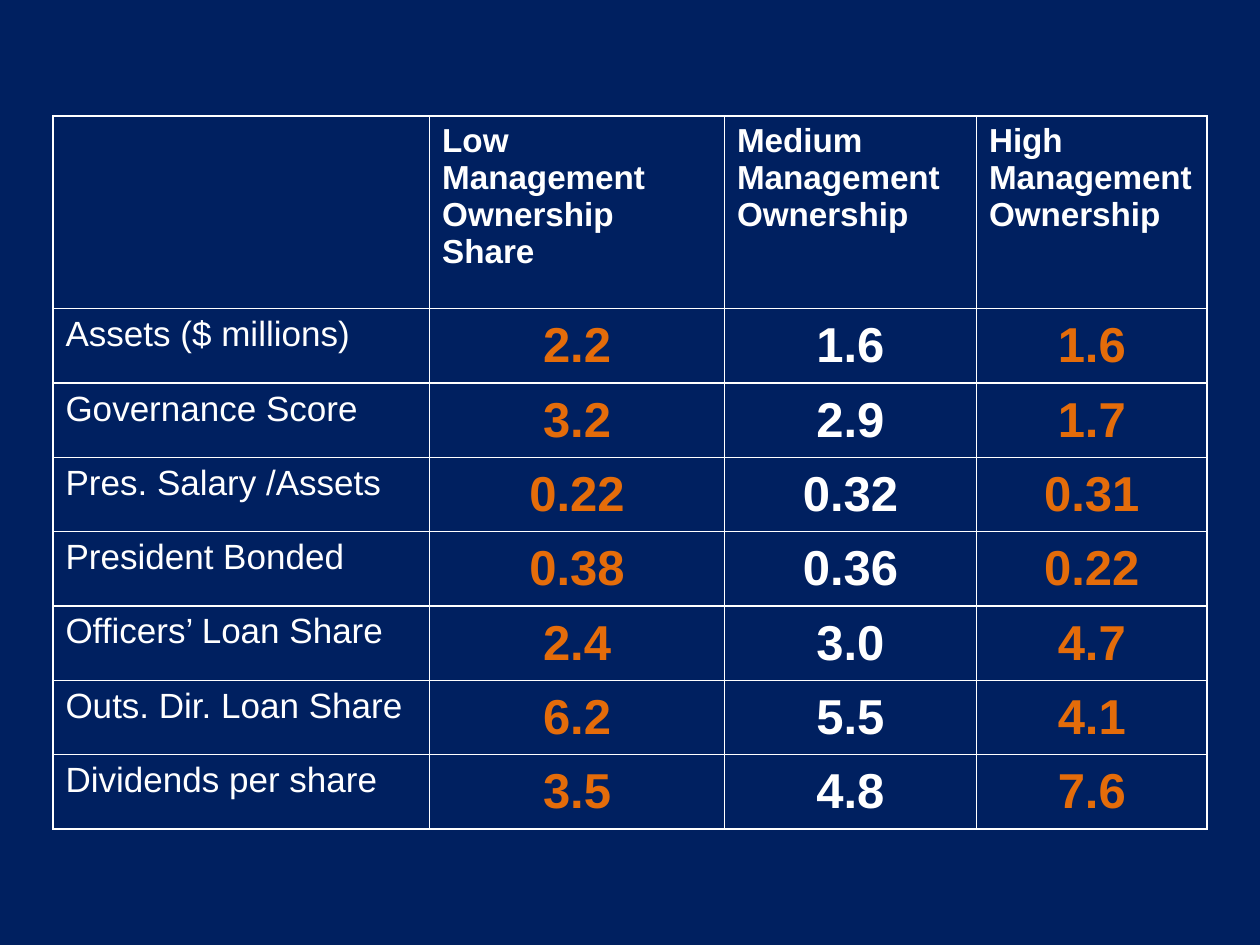
from lxml import etree
from pptx import Presentation
from pptx import util as u
from pptx.dml.color import RGBColor
from pptx.enum import text
from pptx.oxml.ns import qn

PX = u.Inches(1) // 100
NAVY, WHITE, ORANGE = "002060", "FFFFFF", "E46C0A"

HEADERS = ["", "Low Management Ownership Share",
           "Medium Management Ownership", "High Management Ownership"]
ROWS = [
    ["Assets ($ millions)", "2.2", "1.6", "1.6"],
    ["Governance Score", "3.2", "2.9", "1.7"],
    ["Pres. Salary /Assets", "0.22", "0.32", "0.31"],
    ["President Bonded", "0.38", "0.36", "0.22"],
    ["Officers’ Loan Share", "2.4", "3.0", "4.7"],
    ["Outs. Dir. Loan Share", "6.2", "5.5", "4.1"],
    ["Dividends per share", "3.5", "4.8", "7.6"],
]
COLUMN_WIDTHS = [299, 234, 200, 183]
ROW_HEIGHTS = [153] + [59] * len(ROWS)
VALUE_COLORS = [None, ORANGE, WHITE, ORANGE]


def rgb(color):
    return RGBColor.from_string(color)


def add_borders(cell, color):
    properties = cell._tc.get_or_add_tcPr()
    for position, side in enumerate(("a:lnL", "a:lnR", "a:lnT", "a:lnB")):
        line = etree.Element(qn(side), w=str(u.Pt(1)))
        fill = etree.SubElement(line, qn("a:solidFill"))
        etree.SubElement(fill, qn("a:srgbClr"), val=color)
        properties.insert(position, line)


presentation = Presentation()
presentation.slide_width = 1000 * PX
presentation.slide_height = 750 * PX
slide = presentation.slides.add_slide(presentation.slide_layouts[6])
slide.background.fill.solid()
slide.background.fill.fore_color.rgb = rgb(NAVY)

table = slide.shapes.add_table(
    len(ROW_HEIGHTS), len(COLUMN_WIDTHS), 42 * PX, 92 * PX,
    sum(COLUMN_WIDTHS) * PX, sum(ROW_HEIGHTS) * PX).table
table.first_row = table.horz_banding = False
for column, width in zip(table.columns, COLUMN_WIDTHS):
    column.width = width * PX
for row, height in zip(table.rows, ROW_HEIGHTS):
    row.height = height * PX

for row_index, values in enumerate([HEADERS] + ROWS):
    for column_index, value in enumerate(values):
        cell = table.cell(row_index, column_index)
        cell.fill.background()
        add_borders(cell, WHITE)
        if not value:
            continue

        size, bold, color = 20, False, WHITE
        cell.text = value
        paragraph = cell.text_frame.paragraphs[0]
        if row_index == 0:
            size, bold = 19, True
        elif column_index > 0:
            size, bold, color = 28, True, VALUE_COLORS[column_index]
            paragraph.alignment = text.PP_ALIGN.CENTER
            cell.vertical_anchor = text.MSO_ANCHOR.MIDDLE

        font = paragraph.runs[0].font
        for name, setting in {"name": "Arial", "size": u.Pt(size), "bold": bold}.items():
            setattr(font, name, setting)
        font.color.rgb = rgb(color)

presentation.save("out.pptx")
